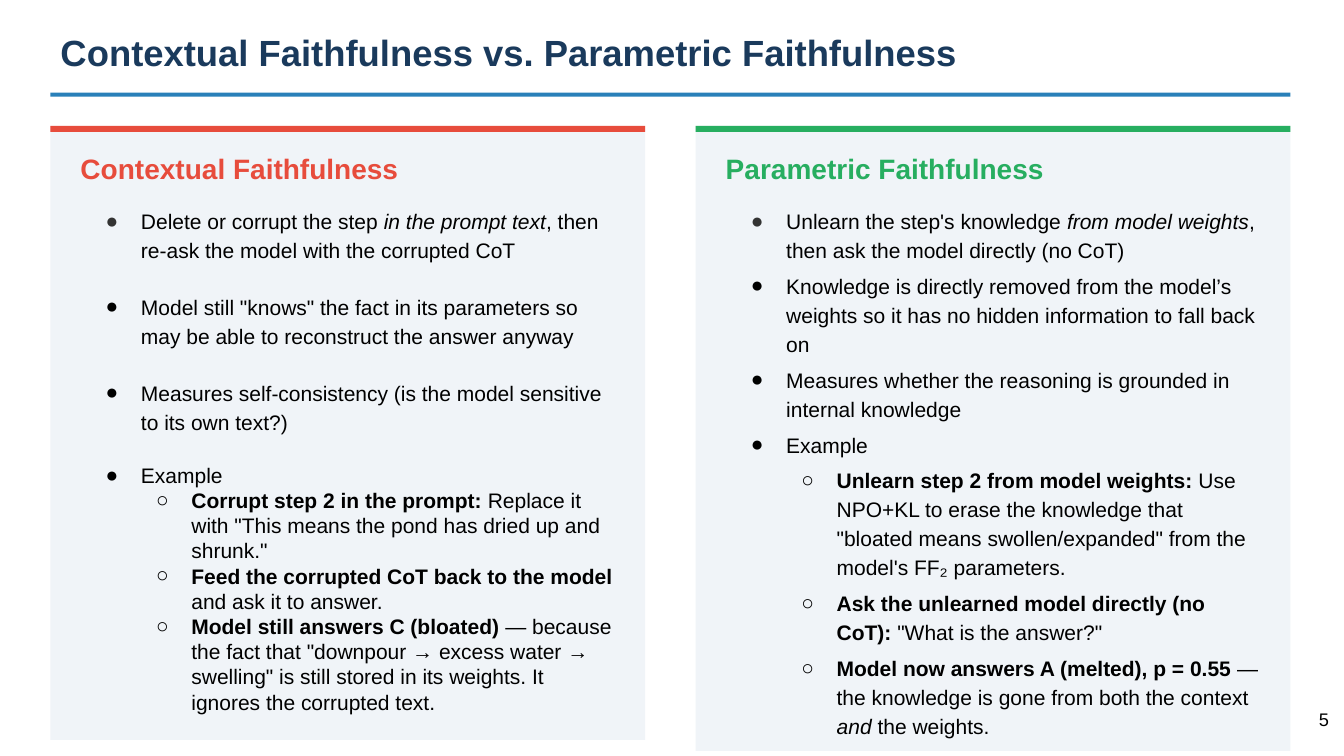
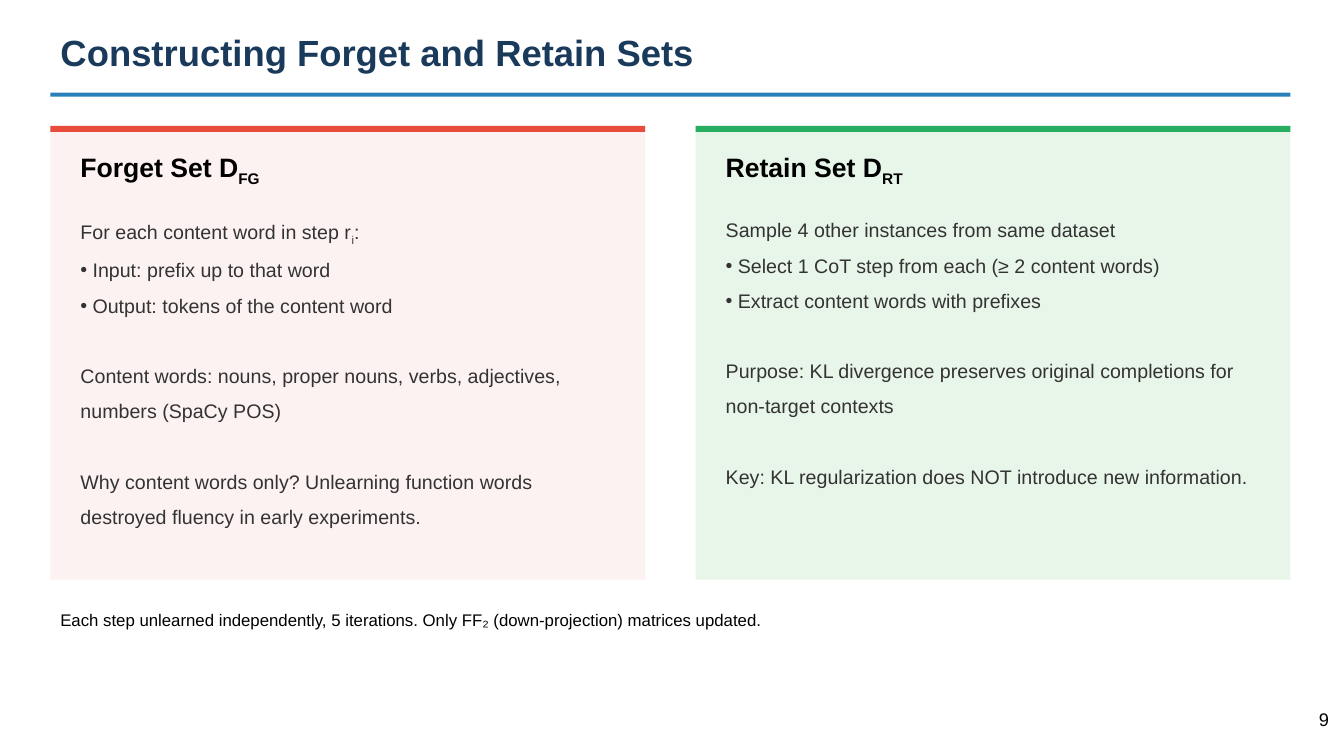
from dataclasses import dataclass

from lxml.etree import SubElement
from pptx import Presentation
from pptx.dml.color import RGBColor
from pptx.enum.shapes import MSO_SHAPE as Shape
from pptx.enum.text import MSO_ANCHOR as Anchor, MSO_AUTO_SIZE as AutoSize, PP_ALIGN as Align
from pptx.oxml.ns import qn
from pptx.util import Inches, Pt

COLORS = {
    "navy": "1A3A5C", "blue": "2980B9", "red": "E74C3C", "green": "27AE60",
    "mist": "F0F4F8", "rose": "FDF2F2", "mint": "E8F5E9",
    "black": "000000", "gray": "333333",
}
FONT = "Arial"
MARGIN, CONTENT_WIDTH = 0.5, 12.3
CARD_TOP, CARD_WIDTH, CARD_GAP = 1.25, 5.9, 0.5
CARD_LEFTS = [MARGIN + column * (CARD_WIDTH + CARD_GAP) for column in range(2)]


@dataclass
class Para:
    """A paragraph: runs are strings or (text, style) pairs; indents in inches."""

    runs: list
    bullet: str = ""
    bullet_color: str = "black"
    level: int = 0
    indent: float = 0
    hanging: float = 0
    before: float = 0
    after: float = 0
    line: float = 1.0


def rgb(name):
    """Return the named colour."""
    return RGBColor.from_string(COLORS[name])


def add_bullet(paragraph, para):
    """Give a paragraph its bullet and hanging indent."""
    props = paragraph._p.get_or_add_pPr()
    props.set("marL", str(Inches(para.indent)))
    props.set("indent", str(-Inches(para.hanging)))
    fill = SubElement(props, qn("a:buClr"))
    SubElement(fill, qn("a:srgbClr"), val=COLORS[para.bullet_color])
    SubElement(props, qn("a:buFont"), typeface=FONT)
    SubElement(props, qn("a:buChar"), char=para.bullet)


def write_text(shape, paras, size=14, color="black", bold=False, align=Align.LEFT, inset=0.05):
    """Fill a shape with formatted paragraphs."""
    frame = shape.text_frame
    frame.word_wrap = True
    frame.auto_size = AutoSize.NONE
    frame.vertical_anchor = Anchor.TOP
    frame.margin_left = frame.margin_right = Inches(0.1)
    frame.margin_top = frame.margin_bottom = Inches(inset)
    for index, para in enumerate(paras):
        paragraph = frame.add_paragraph() if index else frame.paragraphs[0]
        paragraph.alignment = align
        paragraph.level = para.level
        paragraph.line_spacing = para.line
        paragraph.space_before = Pt(para.before)
        paragraph.space_after = Pt(para.after)
        if para.bullet:
            add_bullet(paragraph, para)
        for piece in para.runs:
            words, style = (piece, "") if isinstance(piece, str) else piece
            run = paragraph.add_run()
            run.text = words
            run.font.name = FONT
            run.font.size = Pt(size)
            run.font.color.rgb = rgb(color)
            run.font.bold = bold or style == "bold"
            run.font.italic = style == "italic"
            if style == "sub":
                run._r.get_or_add_rPr().set("baseline", "-25000")


def add_text(slide, left, top, width, height, paras, **text_format):
    """Add a text box."""
    box = slide.shapes.add_textbox(Inches(left), Inches(top), Inches(width), Inches(height))
    write_text(box, paras, **text_format)


def add_block(slide, left, top, width, height, color):
    """Add a plain filled rectangle."""
    block = slide.shapes.add_shape(
        Shape.RECTANGLE, Inches(left), Inches(top), Inches(width), Inches(height))
    block.shadow.inherit = False
    block.fill.solid()
    block.fill.fore_color.rgb = rgb(color)
    block.line.fill.background()


def add_card(slide, left, height, fill, accent, heading, heading_format):
    """Add a panel with an accent edge and a heading."""
    add_block(slide, left, CARD_TOP, CARD_WIDTH, height, fill)
    add_block(slide, left, CARD_TOP, CARD_WIDTH, 0.06, accent)
    add_text(slide, left + 0.2, 1.45, 5.5, 0.5, [Para(heading)], bold=True, **heading_format)


def new_slide(deck, heading, number):
    """Add a slide with its title, rule and page number."""
    slide = deck.slides.add_slide(deck.slide_layouts[5])
    title = slide.shapes.title
    title.left, title.top = Inches(MARGIN), Inches(0.25)
    title.width, title.height = Inches(CONTENT_WIDTH), Inches(0.65)
    write_text(title, [Para([heading])], size=26, color="navy", bold=True)
    add_block(slide, MARGIN, 0.92, CONTENT_WIDTH, 0.04, "blue")
    add_text(slide, 12.48, 6.93, 0.8, 0.57, [Para([str(number)])],
             size=13, align=Align.RIGHT, inset=0.1)
    return slide


def point(*runs, **spacing):
    """Return a main bullet point."""
    return Para(list(runs), "●", indent=0.5, hanging=0.35, **spacing)


def example(lead, *runs, **spacing):
    """Return an example step with a bold lead."""
    return Para([(lead, "bold"), *runs], "○", level=1, indent=1, hanging=0.35, **spacing)


def note(*runs, before=0):
    """Return a line of widely spaced body text."""
    return Para(list(runs), before=before, line=1.5)


def dot(words):
    """Return a compact bulleted note."""
    return Para([words], "•", "gray", indent=0.12, hanging=0.12, line=1.5)


def build_comparison(deck):
    """Build the slide that compares the two kinds of faithfulness."""
    slide = new_slide(deck, "Contextual Faithfulness vs. Parametric Faithfulness", 5)
    first = {"line": 1.15, "bullet_color": "gray"}
    loose = {"line": 1.15, "before": 20}
    tight = {"line": 1.15, "before": 5}
    contextual = [
        point("Delete or corrupt the step ", ("in the prompt text", "italic"),
              ", then re-ask the model with the corrupted CoT", **first),
        point('Model still "knows" the fact in its parameters so may be able to '
              "reconstruct the answer anyway", **loose),
        point("Measures self-consistency (is the model sensitive to its own text?)", **loose),
        point("Example", before=20),
        example("Corrupt step 2 in the prompt:",
                ' Replace it with "This means the pond has dried up and shrunk."'),
        example("Feed the corrupted CoT back to the model", " and ask it to answer."),
        example("Model still answers C (bloated)",
                ' — because the fact that "downpour → excess water → swelling" is still '
                "stored in its weights. It ignores the corrupted text."),
    ]
    parametric = [
        point("Unlearn the step's knowledge ", ("from model weights", "italic"),
              ", then ask the model directly (no CoT)", **first),
        point("Knowledge is directly removed from the model’s weights so it has no hidden "
              "information to fall back on", **tight),
        point("Measures whether the reasoning is grounded in internal knowledge", **tight),
        point("Example", **tight),
        example("Unlearn step 2 from model weights:",
                ' Use NPO+KL to erase the knowledge that "bloated means swollen/expanded" '
                "from the model's FF₂ parameters.", **tight),
        example("Ask the unlearned model directly (no CoT):",
                ' "What is the answer?"', **tight),
        example("Model now answers A (melted), p = 0.55",
                " — the knowledge is gone from both the context ", ("and", "italic"),
                " the weights.", after=5, **tight),
    ]
    cards = [
        ("Contextual Faithfulness", "red", 6.09, contextual),
        ("Parametric Faithfulness", "green", 6.2, parametric),
    ]
    for left, (heading, accent, height, points) in zip(CARD_LEFTS, cards):
        add_card(slide, left, height, "mist", accent, [heading], {"size": 20, "color": accent})
        add_text(slide, left + 0.3, 1.98, 5.4, height - 0.83, points, size=15)


def build_sets(deck):
    """Build the slide on the forget and retain sets."""
    slide = new_slide(deck, "Constructing Forget and Retain Sets", 9)
    gap = 25
    forget = [
        note("For each content word in step r", ("i", "sub"), ":"),
        dot("Input: prefix up to that word"),
        dot("Output: tokens of the content word"),
        note("Content words: nouns, proper nouns, verbs, adjectives, numbers (SpaCy POS)",
             before=gap),
        note("Why content words only? Unlearning function words destroyed fluency in early "
             "experiments.", before=gap),
    ]
    retain = [
        note("Sample 4 other instances from same dataset"),
        dot("Select 1 CoT step from each (≥ 2 content words)"),
        dot("Extract content words with prefixes"),
        note("Purpose: KL divergence preserves original completions for non-target contexts",
             before=gap),
        note("Key: KL regularization does NOT introduce new information.", before=gap),
    ]
    cards = [
        ("Forget Set D", "FG", "rose", "red", forget),
        ("Retain Set D", "RT", "mint", "green", retain),
    ]
    for left, (heading, symbol, fill, accent, notes) in zip(CARD_LEFTS, cards):
        add_card(slide, left, 4.5, fill, accent, [heading, (symbol, "sub")], {"size": 19})
        add_text(slide, left + 0.2, 2, 5.5, 3.3, notes, color="gray")
    add_text(slide, MARGIN, 6, 10.27, 0.5, [Para([
        "Each step unlearned independently, 5 iterations. "
        "Only FF₂ (down-projection) matrices updated."])], size=12)


def main():
    """Build and save the deck."""
    deck = Presentation()
    deck.slide_width, deck.slide_height = Inches(13.33), Inches(7.5)
    build_comparison(deck)
    build_sets(deck)
    deck.save("out.pptx")


if __name__ == "__main__":
    main()
